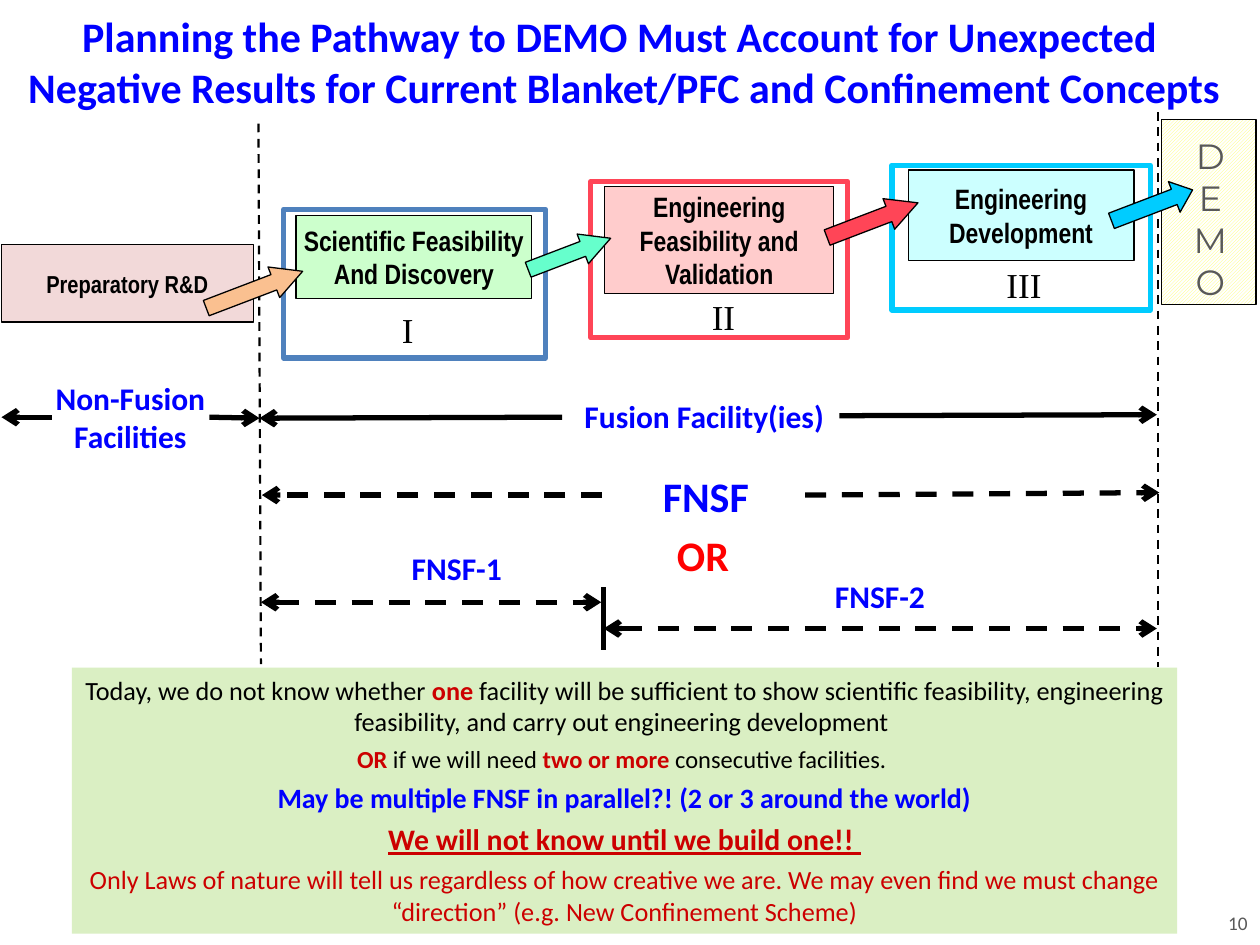
from pptx import Presentation
from pptx.dml.color import RGBColor as RGB
from pptx.enum.dml import MSO_LINE_DASH_STYLE as Dash, MSO_PATTERN_TYPE as Pattern
from pptx.enum.shapes import MSO_CONNECTOR as Link, MSO_SHAPE as Shape
from pptx.enum.text import MSO_ANCHOR as Anchor, MSO_AUTO_SIZE as Auto, PP_ALIGN as Align
from pptx.oxml.ns import qn
from pptx.util import Cm, Pt

BLACK = RGB(0x00, 0x00, 0x00)
WHITE = RGB(0xFF, 0xFF, 0xFF)
GREY = RGB(0x59, 0x59, 0x59)
BLUE = RGB(0x00, 0x00, 0xFF)
RED = RGB(0xFF, 0x00, 0x00)
DARK = RGB(0xCC, 0x00, 0x00)
YELLOW = RGB(0xFF, 0xFF, 0x66)
ROSE = RGB(0xF2, 0xD9, 0xD9)
PEACH = RGB(0xFA, 0xC0, 0x90)
GREEN = RGB(0xCC, 0xFF, 0xCC)
MINT = RGB(0x66, 0xFF, 0xCC)
STEEL = RGB(0x4F, 0x81, 0xBD)
PINK = RGB(0xFF, 0xCC, 0xCC)
CORAL = RGB(0xFF, 0x45, 0x57)
ICE = RGB(0xCC, 0xFF, 0xFF)
CYAN = RGB(0x00, 0xCC, 0xFF)
LIME = RGB(0xDA, 0xEF, 0xC3)


def style(para, size, color, face="Calibri", bold=True, align=Align.CENTER):
    """Set the alignment and font of a paragraph."""
    para.alignment = align
    font = para.font
    font.size, font.name, font.bold = Pt(size), face, bold
    font.color.rgb = color


def write(frame, lines, *args, **opts):
    """Fill a text frame with one styled paragraph per line."""
    frame.word_wrap = True
    for i, line in enumerate(lines):
        para = frame.add_paragraph() if i else frame.paragraphs[0]
        para.text = line
        style(para, *args, **opts)


def place(shape, *place):
    """Move and size a placeholder."""
    shape.left, shape.top, shape.width, shape.height = map(Cm, place)


def label(slide, place, text, *args, **opts):
    """Add a text box with one paragraph."""
    box = slide.shapes.add_textbox(*map(Cm, place))
    write(box.text_frame, [text], *args, **opts)
    return box


def block(slide, place, fill, edge=BLACK, width=0.75, kind=Shape.RECTANGLE):
    """Add a filled and outlined preset shape."""
    shape = slide.shapes.add_shape(kind, *map(Cm, place))
    shape.shadow.inherit = False
    shape.fill.solid()
    shape.fill.fore_color.rgb = fill
    shape.line.color.rgb = edge
    shape.line.width = Pt(width)
    return shape


def panel(slide, place, fill, lines, size=16, width=0.75):
    """Add a block with centred narrow text."""
    frame = block(slide, place, fill, width=width).text_frame
    frame.margin_left = frame.margin_right = frame.margin_top = frame.margin_bottom = 0
    frame.vertical_anchor = Anchor.MIDDLE
    write(frame, lines, size, BLACK, "Arial Narrow")


def arrow(slide, place, fill, head=0.94):
    """Add a block arrow that points up to the right."""
    shape = block(slide, place, fill, kind=Shape.RIGHT_ARROW)
    shape.adjustments[1] = head
    shape.rotation = 339.1


def rule(slide, ends, width=3, dash=False, tips=()):
    """Add a straight line with optional dashes and arrow tips."""
    line = slide.shapes.add_connector(Link.STRAIGHT, *map(Cm, ends))
    line.line.color.rgb = BLACK
    line.line.width = Pt(width)
    if dash:
        line.line.dash_style = Dash.DASH
    props = line._element.spPr
    for tip in tips:
        end = props.ln.makeelement(qn(f"a:{tip}End"), {"type": "arrow"})
        props.ln.append(end)
    props.append(props.makeelement(qn("a:effectLst"), {}))


def heading(slide):
    """Fill the title placeholder."""
    title = slide.shapes.title
    place(title, -0.05, 0.08, 25.27, 2.31)
    title.text_frame.auto_size = Auto.NONE
    write(title.text_frame, [
        "Planning the Pathway to DEMO Must Account for Unexpected ",
        "Negative Results for Current Blanket/PFC and Confinement Concepts"], 24, BLUE)


def notes(slide):
    """Fill the body placeholder with the closing remarks."""
    body = slide.placeholders[1]
    place(body, 1.45, 13.46, 22.28, 5.36)
    body.fill.solid()
    body.fill.fore_color.rgb = LIME
    frame = body.text_frame
    frame.auto_size, frame.word_wrap = Auto.NONE, True
    frame.vertical_anchor = Anchor.TOP
    rows = [
        (15, BLACK, False, ["Today, we do not know whether ", "*one",
                            " facility will be sufficient to show scientific feasibility, "
                            "engineering feasibility, and carry out engineering development "]),
        (14, BLACK, False, ["*OR", " if we will need ", "*two or more ",
                            "consecutive facilities. "]),
        (16, BLUE, True, ["May be multiple FNSF in parallel?! (2 or 3 around the world)"]),
        (17, DARK, True, ["We will not know until we build one!! "]),
        (15, DARK, False, ["Only Laws of nature will tell us regardless of how creative we are. "
                           "We may even find we must change “direction” "
                           "(e.g. New Confinement Scheme)"]),
    ]
    for i, (size, color, bold, parts) in enumerate(rows):
        para = frame.add_paragraph() if i else frame.paragraphs[0]
        props = para._p.get_or_add_pPr()
        props.set("marL", "0")
        props.set("indent", "0")
        props.append(props.makeelement(qn("a:buNone"), {}))
        para.space_before = Pt(4 if i else 0)
        style(para, size, color, bold=bold)
        para.font.underline = size == 17
        for part in parts:
            run = para.add_run()
            run.text = part.lstrip("*")
            if part.startswith("*"):
                run.font.bold = True
                run.font.color.rgb = DARK


def stages(slide):
    """Draw the steps from preparation to DEMO."""
    demo = block(slide, (23.42, 2.41, 1.9, 3.73), WHITE)
    demo.fill.patterned()
    demo.fill.pattern = Pattern.DARK_UPWARD_DIAGONAL
    demo.fill.fore_color.rgb, demo.fill.back_color.rgb = YELLOW, WHITE
    label(slide, (23.7, 2.59, 1.4, 3.68), "D E M O", 20, GREY, "Montserrat", False)
    panel(slide, (0.03, 4.93, 5.08, 1.57), ROSE, ["Preparatory R&D"], 14, 1)
    steps = [
        ((5.72, 4.22, 5.28, 3), STEEL, (5.97, 4.34, 4.75, 1.68), GREEN,
         ["Scientific Feasibility", "And Discovery"], "I", (7.85, 6.1, 0.89, 1.12)),
        ((11.91, 3.66, 5.18, 3.15), CORAL, (12.19, 3.76, 4.62, 2.16), PINK,
         ["Engineering", "Feasibility and Validation"], "II", (14.1, 5.84, 1.07, 1.12)),
        ((17.98, 3.33, 5.21, 2.92), CYAN, (18.31, 3.43, 4.55, 1.83), ICE,
         ["Engineering Development"], "III", (20.04, 5.18, 1.37, 1.12)),
    ]
    for outer, edge, inner, fill, lines, mark, spot in steps:
        block(slide, outer, WHITE, edge, 3)
        panel(slide, inner, fill, lines)
        label(slide, spot, mark, 20, BLACK, "Times New Roman", False, Align.LEFT)
    arrow(slide, (4.09, 5.51, 2.08, 0.66), PEACH)
    arrow(slide, (10.59, 4.8, 1.78, 0.64), MINT)
    arrow(slide, (16.61, 4.11, 1.96, 0.66), CORAL, 0.95)
    arrow(slide, (22.35, 3.81, 1.75, 0.66), CYAN, 0.6)


def spans(slide):
    """Draw the facility ranges below the steps."""
    for ends in [(4.22, 8.41, 5.23, 8.43), (1.04, 8.41, 0.03, 8.41),
                 (16.92, 8.38, 23.32, 8.36), (11.33, 8.41, 5.23, 8.43)]:
        rule(slide, ends, tips=["tail"])
    for ends in [(16.23, 9.98, 23.37, 9.93), (12.14, 9.98, 5.28, 9.98)]:
        rule(slide, ends, dash=True, tips=["tail"])
    for ends in [(5.26, 12.14, 12.12, 12.14), (12.17, 12.67, 23.32, 12.67)]:
        rule(slide, ends, dash=True, tips=["head", "tail"])
    rule(slide, (12.17, 11.84, 12.17, 13.11))
    for spot, text, size, color in [
            ((0.79, 7.52, 3.68, 1.8), "Non-Fusion Facilities", 18, BLUE),
            ((11.48, 7.87, 5.44, 1.02), "Fusion Facility(ies)", 18, BLUE),
            ((11.51, 9.37, 5.44, 1.27), "FNSF", 24, BLUE),
            ((13.28, 10.54, 1.78, 1.27), "OR", 24, RED),
            ((7.98, 10.95, 2.46, 1.02), "FNSF-1", 18, BLUE),
            ((16.51, 11.51, 2.46, 1.02), "FNSF-2", 18, BLUE)]:
        label(slide, spot, text, size, color)


def main():
    """Build and save the slide."""
    deck = Presentation()
    deck.slide_width, deck.slide_height = Cm(25.4), Cm(19.05)
    slide = deck.slides.add_slide(deck.slide_layouts[1])
    heading(slide)
    notes(slide)
    for ends in [(5.21, 2.49, 5.26, 13.39), (23.34, 2.26, 23.34, 13.44)]:
        rule(slide, ends, 1.25, True)
    stages(slide)
    spans(slide)
    page = label(slide, (19.48, 18.1, 5.92, 1), "10", 11, GREY, bold=False, align=Align.RIGHT)
    page.text_frame.vertical_anchor = Anchor.MIDDLE
    deck.save("out.pptx")


if __name__ == "__main__":
    main()
